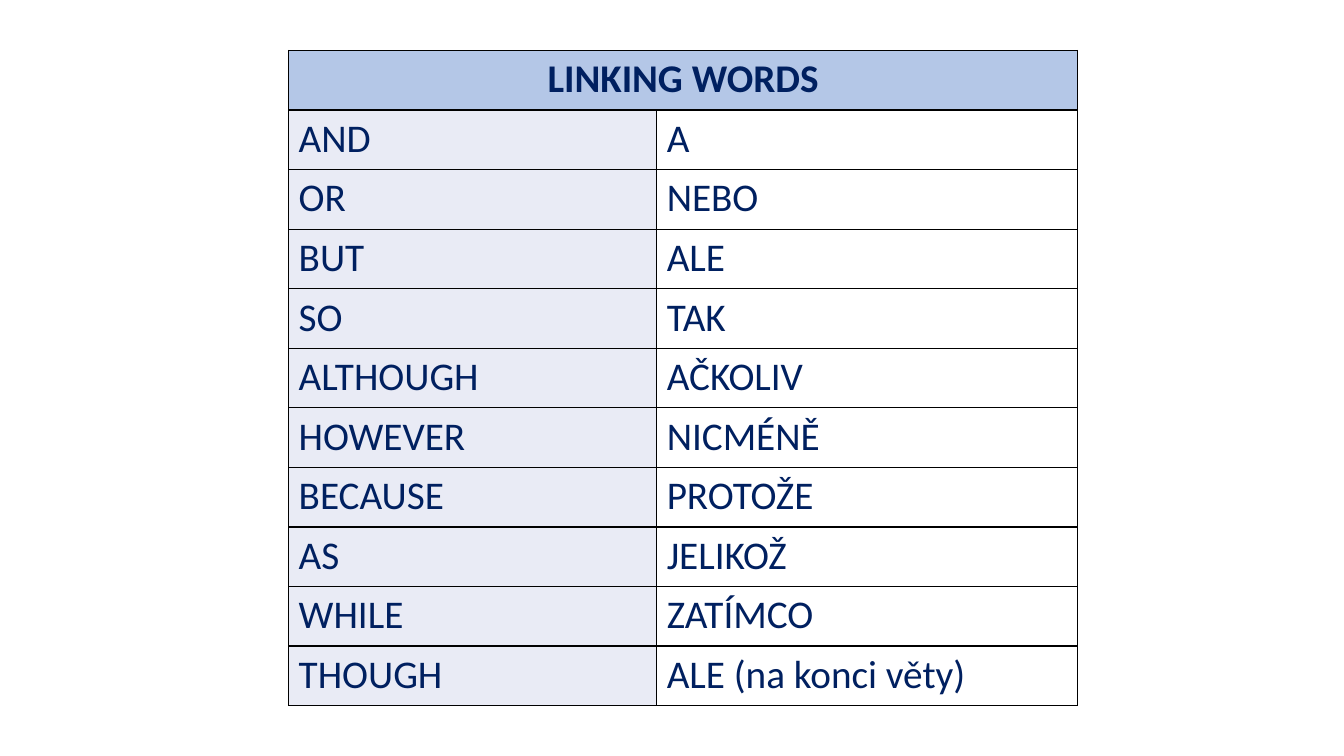
from lxml import etree
from pptx import Presentation
from pptx.dml.color import RGBColor
from pptx.enum.text import PP_ALIGN
from pptx.oxml.ns import qn
from pptx.util import Pt

CENTER, LEFT = PP_ALIGN.CENTER, PP_ALIGN.LEFT
NAVY = RGBColor(0x00, 0x20, 0x60)
BLUE = RGBColor(0xB4, 0xC7, 0xE7)
PALE = RGBColor(0xE9, 0xEB, 0xF5)
WHITE = RGBColor(0xFF, 0xFF, 0xFF)
BLACK = RGBColor(0x00, 0x00, 0x00)

TITLE = "LINKING WORDS"
WORDS = [
    ("AND", "A"),
    ("OR", "NEBO"),
    ("BUT", "ALE"),
    ("SO", "TAK"),
    ("ALTHOUGH", "AČKOLIV"),
    ("HOWEVER", "NICMÉNĚ"),
    ("BECAUSE", "PROTOŽE"),
    ("AS", "JELIKOŽ"),
    ("WHILE", "ZATÍMCO"),
    ("THOUGH", "ALE (na konci věty)"),
]
WIDTHS = [262.9, 300.6]
HEIGHT = 42.55
FONT = {"name": "Calibri", "size": Pt(28)}


def add_border(cell):
    props = cell._tc.get_or_add_tcPr()
    for side in ("lnL", "lnR", "lnT", "lnB"):
        line = etree.SubElement(props, qn(f"a:{side}"), w=str(Pt(1)))
        fill = etree.SubElement(line, qn("a:solidFill"))
        etree.SubElement(fill, qn("a:srgbClr"), val=str(BLACK))


def fill_cell(cell, text, color, bold=False, align=LEFT):
    cell.fill.solid()
    cell.fill.fore_color.rgb = color
    para = cell.text_frame.paragraphs[0]
    para.alignment = align
    run = para.add_run()
    run.text = text
    for key, value in FONT.items():
        setattr(run.font, key, value)
    run.font.bold = bold
    run.font.color.rgb = NAVY


prs = Presentation()
prs.slide_width, prs.slide_height = Pt(960), Pt(540)
slide = prs.slides.add_slide(prs.slide_layouts[6])

rows = len(WORDS) + 1
table = slide.shapes.add_table(
    rows, 2, Pt(206.2), Pt(36), Pt(sum(WIDTHS)), Pt(rows * HEIGHT)
).table
for col, width in zip(table.columns, WIDTHS):
    col.width = Pt(width)
for row in table.rows:
    row.height = Pt(HEIGHT)
    for cell in row.cells:
        add_border(cell)

head = table.cell(0, 0)
head.merge(table.cell(0, 1))
fill_cell(head, TITLE, BLUE, bold=True, align=CENTER)
for num, (english, czech) in enumerate(WORDS, 1):
    fill_cell(table.cell(num, 0), english, PALE)
    fill_cell(table.cell(num, 1), czech, WHITE)

prs.save("out.pptx")
